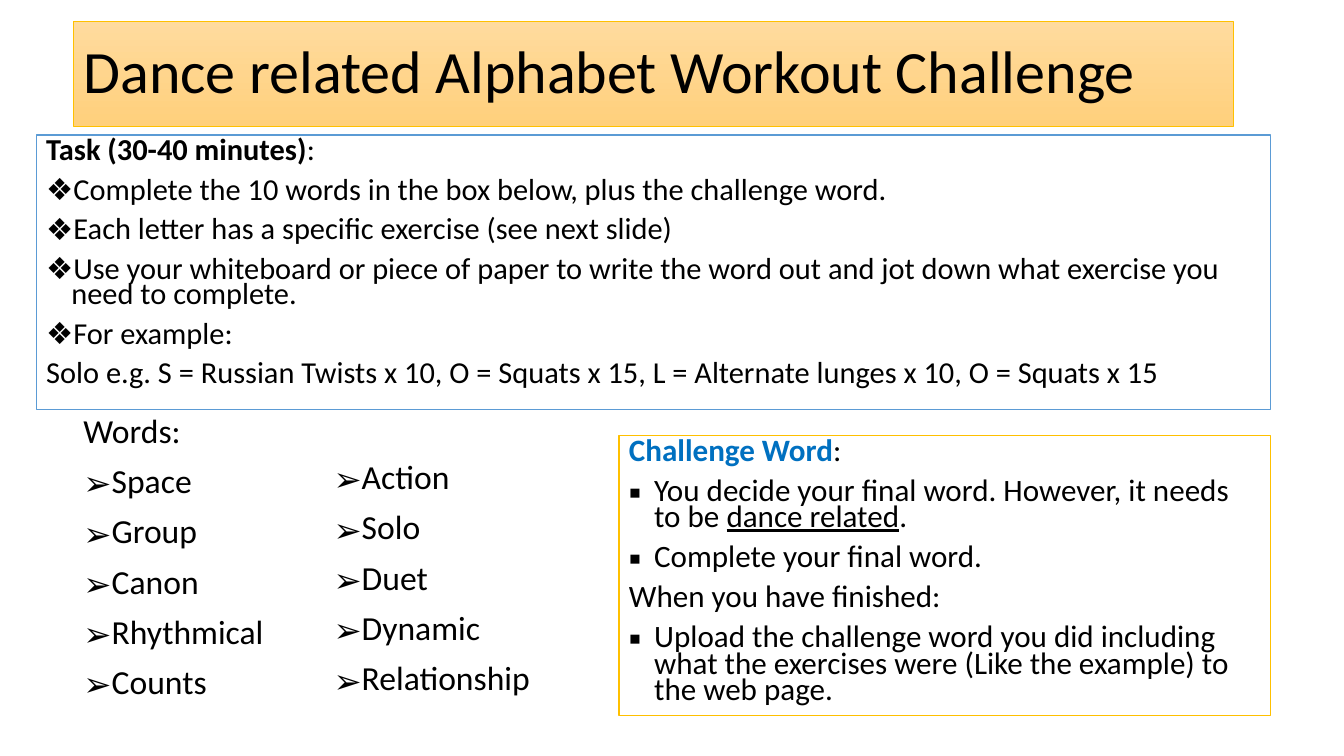
from lxml import etree
from pptx import Presentation
from pptx.dml.color import RGBColor
from pptx.enum.shapes import MSO_SHAPE
from pptx.enum.text import MSO_ANCHOR, PP_ALIGN
from pptx.oxml.ns import qn
from pptx.util import Inches, Pt

RECT = MSO_SHAPE.RECTANGLE
TOP, MIDDLE = MSO_ANCHOR.TOP, MSO_ANCHOR.MIDDLE
LEFT = PP_ALIGN.LEFT
BLACK = RGBColor(0x00, 0x00, 0x00)
WHITE = RGBColor(0xFF, 0xFF, 0xFF)
BLUE = RGBColor(0x00, 0x70, 0xC0)
SKY = RGBColor(0x5B, 0x9B, 0xD5)
GOLD = RGBColor(0xFF, 0xC0, 0x00)
PEACH = RGBColor(0xFF, 0xDB, 0x9E)
AMBER = RGBColor(0xFF, 0xD0, 0x7C)

FONT, SIGNS = "Calibri", "Noto Sans Symbols"
GEM, ARROW, SQUARE = "❖", "➢", "▪"
BOLD = {"bold": True}
UNDER = {"underline": True}

TITLE = [("", "Dance related Alphabet Workout Challenge")]
TASK = [
    ("", [("Task (30-40 minutes)", BOLD, BLACK), ":"]),
    (GEM, "Complete the 10 words in the box below, plus the challenge word."),
    (GEM, "Each letter has a specific exercise (see next slide)"),
    (GEM, "Use your whiteboard or piece of paper to write the word out "
          "and jot down what exercise you need to complete."),
    (GEM, "For example:"),
    ("", "Solo e.g. S = Russian Twists x 10, O = Squats x 15, "
         "L = Alternate lunges x 10, O = Squats x 15"),
]
WORDS = [("", "Words:")] + [
    (ARROW, word) for word in ("Space", "Group", "Canon", "Rhythmical", "Counts")]
MORE = [
    (ARROW, word) for word in ("Action", "Solo", "Duet", "Dynamic", "Relationship")]
FINAL = [
    ("", [("Challenge Word", BOLD, BLUE), ":"]),
    (SQUARE, ["You decide your final word. However, it needs to be ",
              ("dance related", UNDER, BLACK), "."]),
    (SQUARE, "Complete your final word."),
    ("", "When you have finished:"),
    (SQUARE, "Upload the challenge word you did including what the exercises "
             "were (Like the example) to the web page."),
]

WIDE, HIGH = 13.33, 7.5
EDGE, INNER, RIGHT = 0.36, 0.73, 12.6
SPLIT, HALF = 3.21, 6.14
TASK_TOP, TASK_END = 1.34, 4.06

deck = Presentation()
deck.slide_width, deck.slide_height = Inches(WIDE), Inches(HIGH)
slide = deck.slides.add_slide(deck.slide_layouts[6])


def write(shape, lines, size, pitch, anchor=TOP):
    frame = shape.text_frame
    frame.word_wrap = True
    frame.vertical_anchor = anchor
    for i, (mark, parts) in enumerate(lines):
        para = frame.add_paragraph() if i else frame.paragraphs[0]
        para.alignment = LEFT
        para.line_spacing = pitch
        para.space_before = Pt(10 if i else 0)
        if mark:
            props = para._p.get_or_add_pPr()
            props.set("marL", str(Inches(0.25)))
            props.set("indent", str(-Inches(0.25)))
            etree.SubElement(props, qn("a:buFont")).set("typeface", SIGNS)
            etree.SubElement(props, qn("a:buChar")).set("char", mark)
        for part in [parts] if isinstance(parts, str) else parts:
            text, style, color = (part, {}, BLACK) if isinstance(part, str) else part
            run = para.add_run()
            run.text = text
            run.font.name, run.font.size = FONT, Pt(size)
            run.font.color.rgb = color
            for key, value in style.items():
                setattr(run.font, key, value)


def place(box):
    return [Inches(n) for n in box]


def panel(box, edge, weight):
    shape = slide.shapes.add_shape(RECT, *place(box))
    shape.shadow.inherit = False
    shape.fill.solid()
    shape.fill.fore_color.rgb = WHITE
    shape.line.color.rgb = edge
    shape.line.width = Pt(weight)
    return shape


task = panel((EDGE, TASK_TOP, RIGHT - EDGE, TASK_END - TASK_TOP), SKY, 1)
write(task, TASK, 21.7, 0.7)

title = panel((INNER, 0.21, 11.5, 1.04), GOLD, 0.5)
title.fill.gradient()
title.fill.gradient_angle = 270
for stop, color in zip(title.fill.gradient_stops, (PEACH, AMBER)):
    stop.color.rgb = color
write(title, TITLE, 42.9, 0.9, MIDDLE)

for box, lines in (((INNER, TASK_END, 2.34, 3.03), WORDS),
                   ((SPLIT, 4.52, 2.28, 2.76), MORE)):
    write(slide.shapes.add_textbox(*place(box)), lines, 24, 0.9)

final = panel((HALF, 4.32, RIGHT - HALF, 2.78), GOLD, 1)
write(final, FINAL, 22.2, 0.7)

deck.save("out.pptx")
